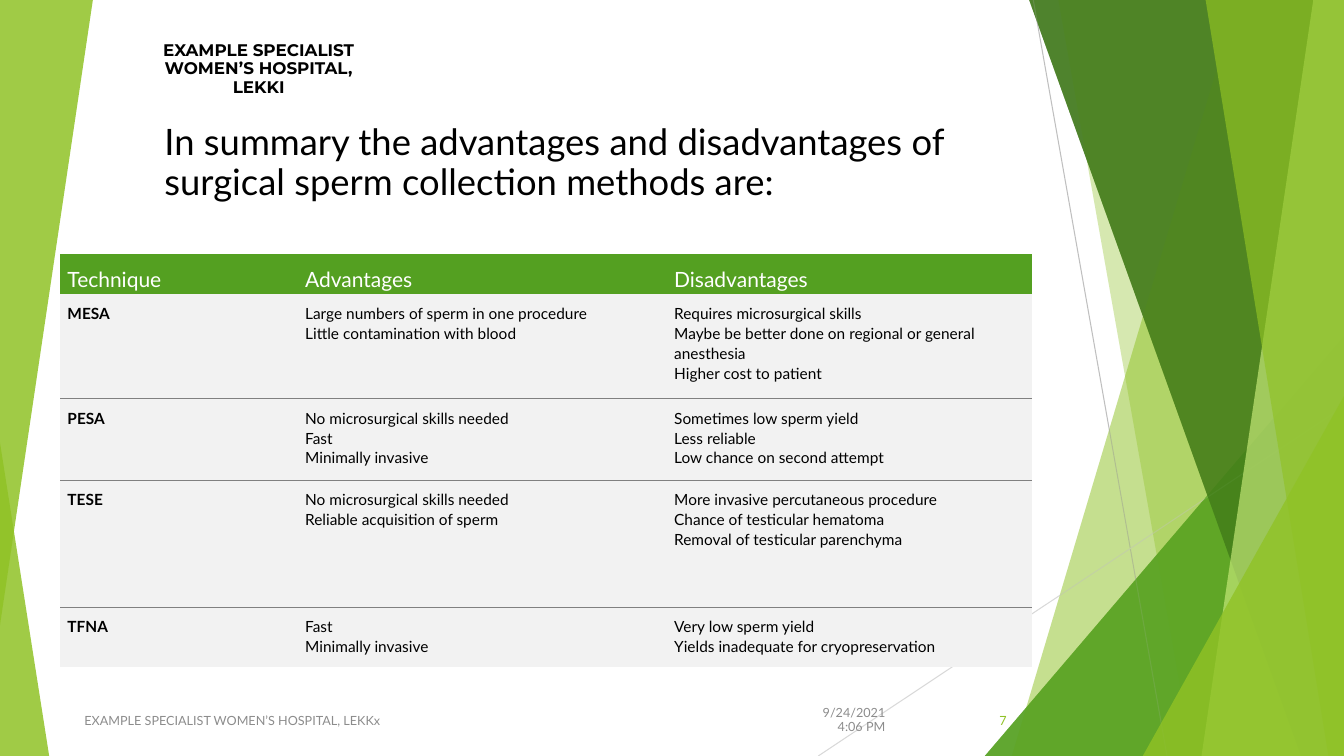
from dataclasses import dataclass

from lxml.etree import SubElement
from pptx import Presentation
from pptx.dml.color import RGBColor
from pptx.enum.shapes import MSO_CONNECTOR, MSO_SHAPE
from pptx.enum.text import MSO_ANCHOR, MSO_AUTO_SIZE, PP_ALIGN
from pptx.oxml import parse_xml
from pptx.oxml.ns import nsdecls, qn
from pptx.util import Cm, Pt


@dataclass(frozen=True)
class Theme:
    lime: str = "90C226"
    green: str = "54A021"
    forest: str = "3F7819"
    pale: str = "C0E474"
    ink: str = "000000"
    white: str = "FFFFFF"
    muted: str = "8C8C8C"
    row: str = "F2F2F2"
    rule: str = "808080"
    ray_dark: str = "BFBFBF"
    ray_light: str = "D9D9D9"
    body_font: str = "Lato"
    brand_font: str = "Montserrat"
    title_size: float = 26
    header_size: float = 15
    brand_size: float = 12
    cell_size: float = 11
    footer_size: float = 9
    rule_width: float = 0.75


theme = Theme()
WIDTH, HEIGHT, TOP = 33.87, 19.05, -0.02


def write(frame, lines, *, size, color=theme.ink, font=theme.body_font, bold=False,
          align=PP_ALIGN.LEFT, spacing=1.0, after=0):
    """Fill a text frame with one paragraph per line, all in one format."""
    frame.word_wrap = True
    for i, line in enumerate(lines):
        paragraph = frame.paragraphs[0] if i == 0 else frame.add_paragraph()
        paragraph.alignment = align
        paragraph.line_spacing = spacing
        paragraph.space_after = Pt(after)
        run = paragraph.add_run()
        run.text = line
        run.font.size = Pt(size)
        run.font.name = font
        run.font.bold = bold
        run.font.color.rgb = RGBColor.from_string(color)


def tint(shape, color, opacity):
    """Give a shape a see-through fill with no line or shadow."""
    shape.shadow.inherit = False
    shape.line.fill.background()
    shape.fill.solid()
    shape.fill.fore_color.rgb = RGBColor.from_string(color)
    rgb = shape.element.spPr.find(qn("a:solidFill")).find(qn("a:srgbClr"))
    SubElement(rgb, qn("a:alpha")).set("val", str(opacity * 1000))


deck = Presentation()
deck.slide_width, deck.slide_height = Cm(WIDTH), Cm(HEIGHT)
slide = deck.slides.add_slide(deck.slide_layouts[5])
shapes = slide.shapes

# Facets reach the right edge: (top x, bottom x); triangles: (left, top)
facets = [
    ((31.19, 25.5), theme.lime, 30, "band"),
    ((26.67, 30.05), theme.lime, 20, "band"),
    ((24.82, 8.46), theme.green, 72, "triangle"),
    ((25.93, 32.79), theme.forest, 70, "band"),
    ((33.1, 30.28), theme.pale, 70, "band"),
    ((30.38, 33.48), theme.lime, 65, "band"),
    ((28.8, 9.98), theme.lime, 80, "triangle"),
]
# Left wedges: top, width, height, apex, rotation
wedges = [(11.15, 1.24, 7.9, 0, 0), (0, 2.34, 15.75, 1, 180)]
rays = [
    (26.04, 0, 29.41, HEIGHT, theme.ray_dark),
    (WIDTH, 10.24, 20.62, HEIGHT, theme.ray_light),
]

# The fan is layered twice, with the thin rays between the layers
for layer, (wedge_top, wedge_width, wedge_height, apex, rotation) in enumerate(wedges):
    if layer == 1:
        for x1, y1, x2, y2, color in rays:
            ray = shapes.add_connector(MSO_CONNECTOR.STRAIGHT, Cm(x1), Cm(y1), Cm(x2), Cm(y2))
            ray.line.color.rgb = RGBColor.from_string(color)
            ray.line.width = Pt(theme.rule_width)
            SubElement(ray.element.spPr, qn("a:effectLst"))
    for (first, second), color, opacity, kind in facets:
        if kind == "band":
            outline = shapes.build_freeform(Cm(first), Cm(TOP))
            outline.add_line_segments([(Cm(WIDTH), Cm(TOP)), (Cm(WIDTH), Cm(HEIGHT)),
                                       (Cm(second), Cm(HEIGHT))])
            facet = outline.convert_to_shape()
        else:
            facet = shapes.add_shape(MSO_SHAPE.ISOSCELES_TRIANGLE, Cm(first), Cm(second),
                                     Cm(WIDTH - first), Cm(HEIGHT - second))
            facet.adjustments[0] = 1
        tint(facet, color, opacity)
    wedge = shapes.add_shape(MSO_SHAPE.ISOSCELES_TRIANGLE, 0, Cm(wedge_top),
                             Cm(wedge_width), Cm(wedge_height))
    wedge.adjustments[0] = apex
    wedge.rotation = rotation
    tint(wedge, theme.lime, 85)

title = shapes.title
title.left, title.top, title.width, title.height = Cm(3.89), Cm(2.24), Cm(21.18), Cm(3)
title.text_frame.auto_size = MSO_AUTO_SIZE.NONE
title.text_frame.vertical_anchor = MSO_ANCHOR.BOTTOM
write(title.text_frame,
      ["In summary the advantages and disadvantages of surgical sperm collection methods are:"],
      size=theme.title_size, spacing=0.9)

footer = dict(size=theme.footer_size, color=theme.muted, after=6)
captions = [
    (3.56, 1.19, 5.92, 1.12, ["EXAMPLE SPECIALIST", "WOMEN’S HOSPITAL,", "LEKKI"],
     dict(size=theme.brand_size, font=theme.brand_font, bold=True,
          align=PP_ALIGN.CENTER, spacing=0.9)),
    (1.88, 17.65, 17.5, 1.02, ["EXAMPLE SPECIALIST WOMEN’S HOSPITAL, LEKKx"], footer),
    (20.02, 17.65, 2.54, 1.02, ["9/24/2021 4:06 PM"],
     footer | dict(align=PP_ALIGN.RIGHT, spacing=0.9)),
    (23.72, 17.65, 1.9, 1.02, ["7"], footer | dict(align=PP_ALIGN.RIGHT, color=theme.lime)),
]
for left, top, width, height, lines, style in captions:
    caption = shapes.add_textbox(Cm(left), Cm(top), Cm(width), Cm(height))
    caption.text_frame.vertical_anchor = MSO_ANCHOR.MIDDLE
    write(caption.text_frame, lines, **style)

techniques = [
    (["Technique"], ["Advantages"], ["Disadvantages"]),
    (["MESA"],
     ["Large numbers of sperm in one procedure", "Little contamination with blood"],
     ["Requires microsurgical skills",
      "Maybe be better done on regional or general anesthesia",
      "Higher cost to patient"]),
    (["PESA"],
     ["No microsurgical skills needed", "Fast", "Minimally invasive"],
     ["Sometimes low sperm yield", "Less reliable", "Low chance on second attempt"]),
    (["TESE"],
     ["No microsurgical skills needed", "Reliable acquisition of sperm"],
     ["More invasive percutaneous procedure", "Chance of testicular hematoma",
      "Removal of testicular parenchyma"]),
    (["TFNA"],
     ["Fast", "Minimally invasive"],
     ["Very low sperm yield", "Yields inadequate for cryopreservation"]),
]
column_widths = [5.99, 9.3, 9.19]
row_heights = [1, 2.64, 2.06, 3.2, 1.5]
comparison = shapes.add_table(len(row_heights), len(column_widths), Cm(1.52), Cm(6.4),
                              Cm(sum(column_widths)), Cm(sum(row_heights)))
table = comparison.table
for style_id in comparison.element.iter(qn("a:tableStyleId")):
    style_id.text = "{2D5ABB26-0587-4C30-8999-92F81FD0307C}"
for column, width in zip(table.columns, column_widths):
    column.width = Cm(width)

last = len(techniques) - 1
for r, (technique, height) in enumerate(zip(techniques, row_heights)):
    table.rows[r].height = Cm(height)
    header = r == 0
    edges = [edge for edge, ruled in (("lnT", r > 1), ("lnB", 0 < r < last)) if ruled]
    for c, lines in enumerate(technique):
        cell = table.cell(r, c)
        cell.margin_left = cell.margin_right = Cm(0.18)
        cell.margin_top, cell.margin_bottom = Cm(0.23), 0
        cell.vertical_anchor = MSO_ANCHOR.MIDDLE if header else MSO_ANCHOR.TOP
        cell.fill.solid()
        cell.fill.fore_color.rgb = RGBColor.from_string(theme.green if header else theme.row)
        write(cell.text_frame, lines, spacing=1.07, bold=c == 0 and not header,
              size=theme.header_size if header else theme.cell_size,
              color=theme.white if header else theme.ink)
        for position, edge in enumerate(edges):
            cell._tc.get_or_add_tcPr().insert(position, parse_xml(
                f'<a:{edge} {nsdecls("a")} w="{Pt(theme.rule_width)}"><a:solidFill>'
                f'<a:srgbClr val="{theme.rule}"/></a:solidFill></a:{edge}>'))

deck.save("out.pptx")
